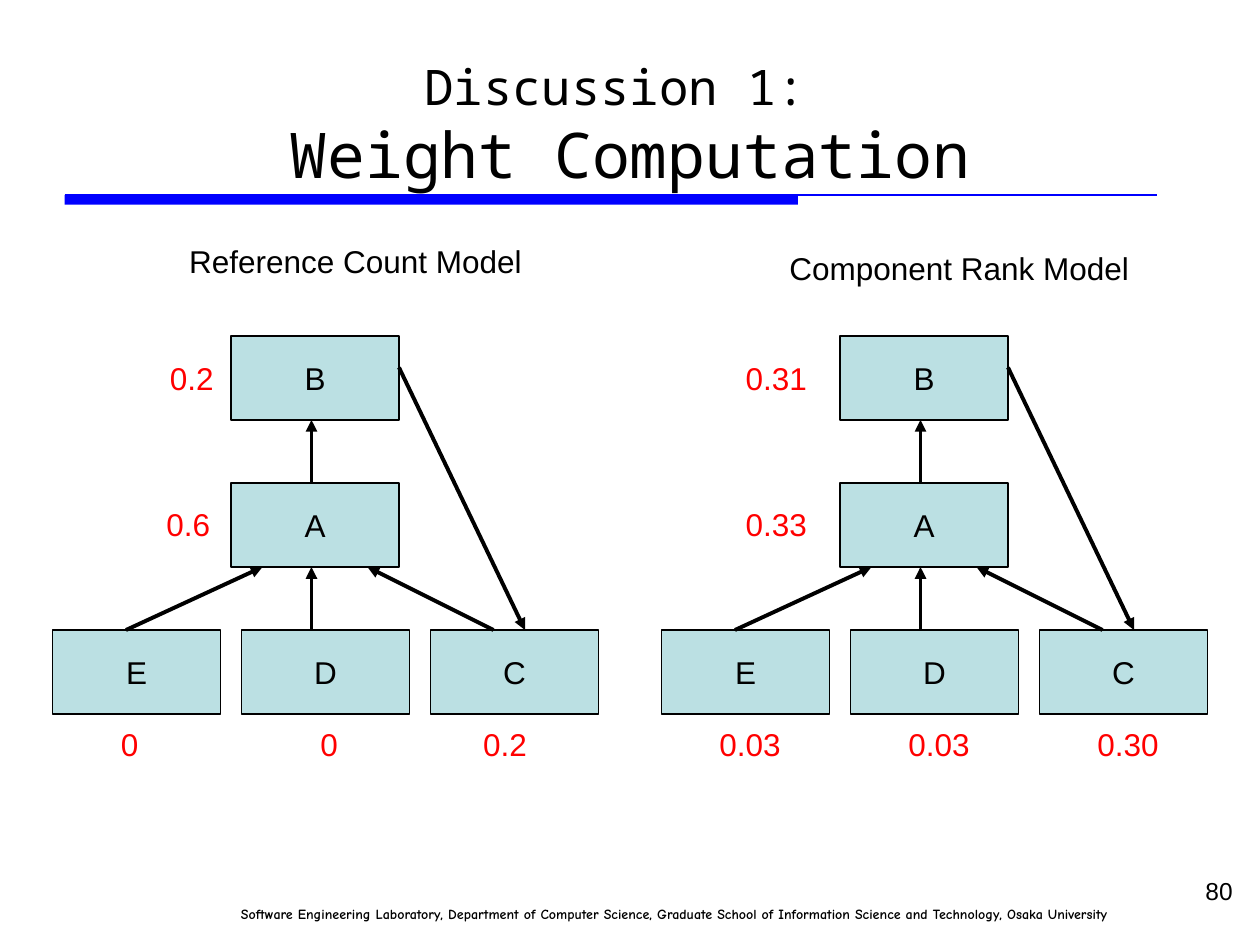
from lxml import etree
from pptx import Presentation
from pptx.dml.color import RGBColor
from pptx.enum.shapes import MSO_CONNECTOR as CONNECTOR, MSO_SHAPE as SHAPE
from pptx.enum.text import MSO_ANCHOR as ANCHOR, PP_ALIGN as ALIGN
from pptx.oxml.ns import qn
from pptx.util import Pt

COLORS = {"ink": "000000", "rule": "0000FF", "node": "BBE0E3", "weight": "FF0000"}
NODE_W, NODE_H = 96, 48
NODES = {"B": (102, 0), "A": (102, 84), "E": (0, 168), "D": (108, 168), "C": (216, 168)}
ARROWS = [
    ((148, 84), (148, 48)),     # A to B
    ((148, 168), (148, 132)),   # D to A
    ((42, 168), (120, 132)),    # E to A
    ((252, 168), (180, 132)),   # C to A
    ((198, 18), (270, 168)),    # B to C
]
WEIGHT_TOPS = {"B": 9.5, "A": 93, "E": 219, "D": 219, "C": 219}
WEIGHT_WIDTHS = {1: 24.5, 3: 39.5, 4: 49.5}  # by number of characters

# Each weight is its text and its left edge within the graph
REFERENCE_COUNT = {"B": ("0.2", 60), "A": ("0.6", 58), "E": ("0", 32),
                   "D": ("0", 146), "C": ("0.2", 239)}
COMPONENT_RANK = {"B": ("0.31", 41), "A": ("0.33", 41), "E": ("0.03", 26),
                  "D": ("0.03", 134), "C": ("0.30", 242)}


def rgb(name):
    return RGBColor.from_string(COLORS[name])


def style(paragraph, size, font="Arial", color="ink", align=ALIGN.LEFT):
    paragraph.alignment = align
    paragraph.font.size = Pt(size)
    paragraph.font.name = font
    paragraph.font.color.rgb = rgb(color)


def add_text(slide, box, text, size, wrap=False, **look):
    frame = slide.shapes.add_textbox(*map(Pt, box)).text_frame
    frame.word_wrap = wrap
    frame.text = text
    style(frame.paragraphs[0], size, **look)
    return frame


def add_box(slide, box, fill):
    shape = slide.shapes.add_shape(SHAPE.RECTANGLE, *map(Pt, box))
    shape.shadow.inherit = False
    shape.fill.solid()
    shape.fill.fore_color.rgb = rgb(fill)
    return shape


def add_line(slide, start, end, color, width, arrow=False):
    line = slide.shapes.add_connector(CONNECTOR.STRAIGHT, *map(Pt, (*start, *end)))
    line.line.color.rgb = rgb(color)
    line.line.width = Pt(width)
    if arrow:
        etree.SubElement(line.line._get_or_add_ln(), qn("a:tailEnd"), type="triangle")
    etree.SubElement(line._element.spPr, qn("a:effectLst"))


def add_header(slide, left, top, width, height):
    frame = add_text(slide, (left, top, width, height),
                     "Discussion 1: \vWeight Computation", 36, wrap=True,
                     font="Noto Sans Mono", align=ALIGN.CENTER)
    frame.vertical_anchor = ANCHOR.MIDDLE
    frame.paragraphs[0].runs[0].font.size = Pt(28)
    rule_top = top + 69.5
    add_box(slide, (left + 1, rule_top, 419, 5.5), "rule").line.fill.background()
    add_line(slide, (left + 1, rule_top), (left + 625, rule_top), "rule", 0.75)


def add_graph(slide, left, top, weights):
    for name, (x, y) in NODES.items():
        node = add_box(slide, (left + x, top + y, NODE_W, NODE_H), "node")
        node.line.color.rgb = rgb("ink")
        node.line.width = Pt(0.75)
        frame = node.text_frame
        frame.word_wrap = False
        frame.vertical_anchor = ANCHOR.MIDDLE
        frame.text = name
        style(frame.paragraphs[0], 18, align=ALIGN.CENTER)

    for (x1, y1), (x2, y2) in ARROWS:
        add_line(slide, (left + x1, top + y1), (left + x2, top + y2),
                 "ink", 2.25, arrow=True)

    for name, (weight, x) in weights.items():
        box = (left + x, top + WEIGHT_TOPS[name], WEIGHT_WIDTHS[len(weight)], 29)
        add_text(slide, box, weight, 18, color="weight")


def add_footer(slide, left, top, width, height):
    frame = add_text(
        slide, (left, top + 17, width - 70.5, height - 17),
        "Software Engineering Laboratory, Department of Computer Science, "
        "Graduate School of Information Science and Technology, Osaka University",
        8, font="Comic Neue", align=ALIGN.RIGHT)
    frame.paragraphs[0].font.bold = True
    add_text(slide, (left + width - 168, top, 168, 17), "80", 14,
             wrap=True, align=ALIGN.RIGHT)


def main():
    prs = Presentation()
    prs.slide_width, prs.slide_height = Pt(720), Pt(540)
    slide = prs.slides.add_slide(prs.slide_layouts[6])
    add_header(slide, 36, 42, 648, 57)
    add_text(slide, (101, 134.5, 204.5, 29), "Reference Count Model", 18)
    add_graph(slide, 30, 192, REFERENCE_COUNT)
    add_text(slide, (444, 139, 209, 29), "Component Rank Model", 18)
    add_graph(slide, 378, 192, COMPONENT_RANK)
    add_footer(slide, 60, 497, 651.5, 34)
    prs.save("out.pptx")


if __name__ == "__main__":
    main()
